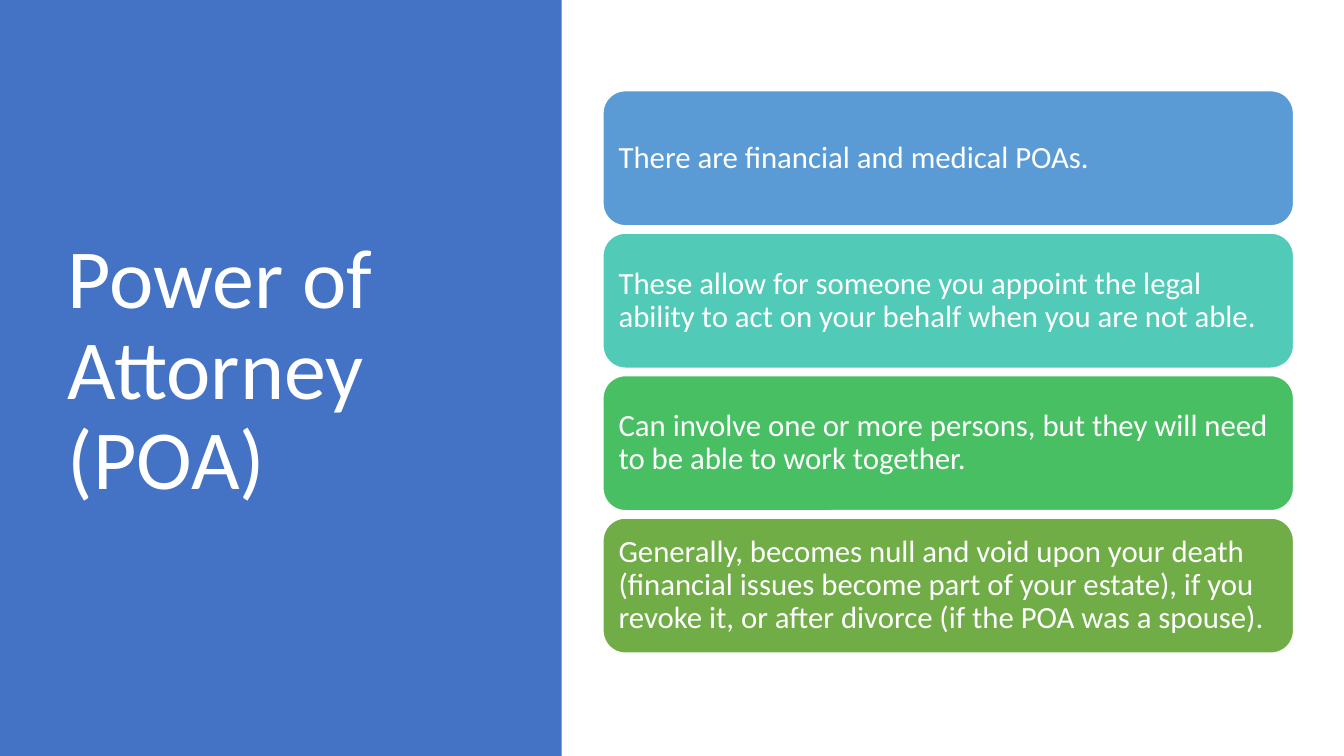
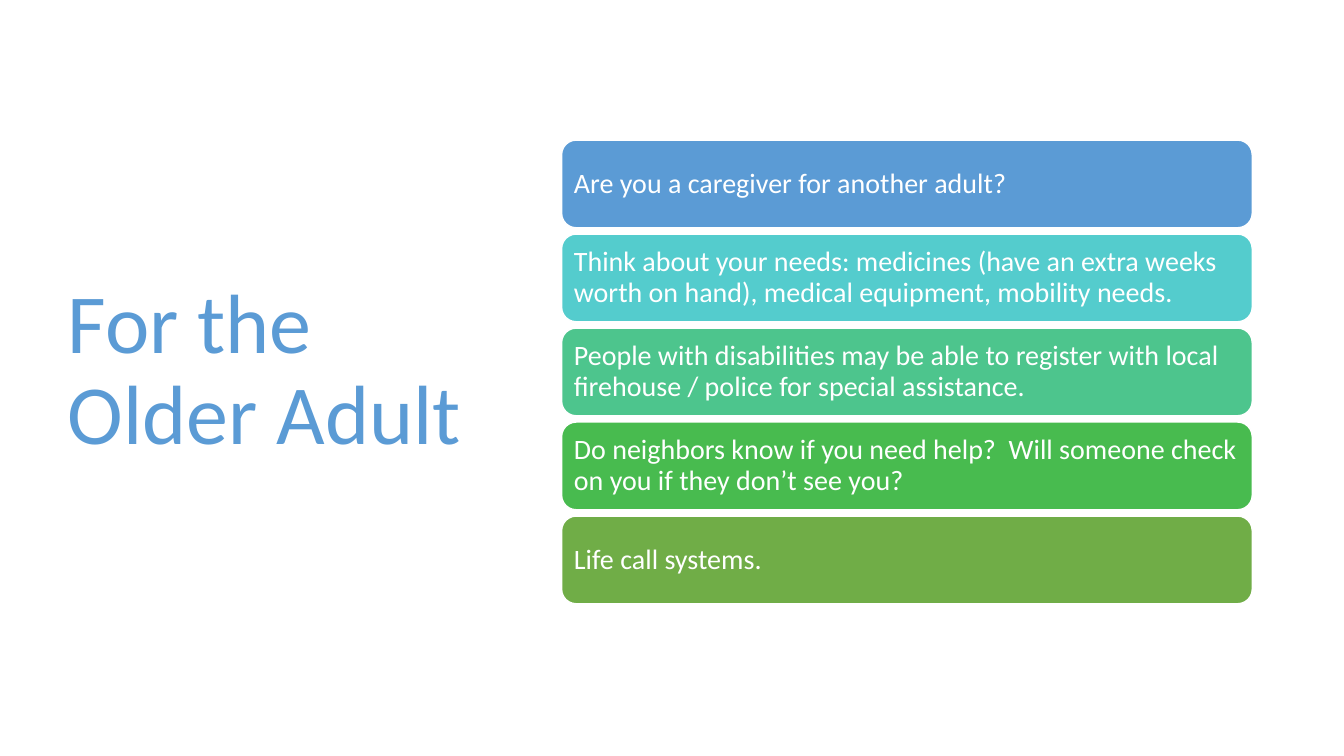
from pptx import Presentation
from pptx.dml.color import RGBColor
from pptx.enum.shapes import MSO_SHAPE
from pptx.enum.text import MSO_ANCHOR, MSO_AUTO_SIZE, PP_ALIGN
from pptx.util import Inches, Pt

RECT = MSO_SHAPE.RECTANGLE
ROUND = MSO_SHAPE.ROUNDED_RECTANGLE
MIDDLE = MSO_ANCHOR.MIDDLE
NO_FIT = MSO_AUTO_SIZE.NONE
LEFT = PP_ALIGN.LEFT

WHITE = RGBColor(0xFF, 0xFF, 0xFF)
NAVY = RGBColor(0x44, 0x72, 0xC4)
BLUE = RGBColor(0x5B, 0x9B, 0xD5)
TEAL = RGBColor(0x52, 0xCA, 0xB8)
CYAN = RGBColor(0x54, 0xCC, 0xCD)
MINT = RGBColor(0x4D, 0xC5, 0x8D)
GREEN = RGBColor(0x49, 0xBF, 0x64)
LEAF = RGBColor(0x48, 0xBB, 0x4F)
OLIVE = RGBColor(0x70, 0xAD, 0x47)

FONT = "Calibri"
TITLE_BOX = (0.57, 0.68, 4.16, 6.02)
PANEL_BOX = (0, 0, 5.57, 7.5)

POA_CARDS = [
    ("There are financial and medical POAs.", BLUE),
    ("These allow for someone you appoint the legal ability to act on your "
     "behalf when you are not able.", TEAL),
    ("Can involve one or more persons, but they will need to be able to "
     "work together.", GREEN),
    ("Generally, becomes null and void upon your death (financial issues "
     "become part of your estate), if you revoke it, or after divorce (if "
     "the POA was a spouse).", OLIVE),
]
ADULT_CARDS = [
    ("Are you a caregiver for another adult?", BLUE),
    ("Think about your needs: medicines (have an extra weeks worth on hand), "
     "medical equipment, mobility needs.", CYAN),
    ("People with disabilities may be able to register with local firehouse "
     "/ police for special assistance.", MINT),
    ("Do neighbors know if you need help?  Will someone check on you if they "
     "don’t see you?", LEAF),
    ("Life call systems.", OLIVE),
]


def write(shape, text, size, color=WHITE, inset=0.1):
    """Fill a shape with left-aligned, vertically centred text."""
    frame = shape.text_frame
    frame.word_wrap = True
    frame.auto_size = NO_FIT
    frame.vertical_anchor = MIDDLE
    frame.margin_left = frame.margin_right = Inches(inset)
    frame.margin_top = frame.margin_bottom = Inches(inset)
    para = frame.paragraphs[0]
    para.alignment = LEFT
    para.line_spacing = 0.9
    run = para.add_run()
    run.text = text
    run.font.name = FONT
    run.font.size = Pt(size)
    run.font.color.rgb = color


def block(slide, kind, box, fill, line=None):
    """Add a flat filled shape, outlined if a line colour is given."""
    shape = slide.shapes.add_shape(kind, *map(Inches, box))
    shape.shadow.inherit = False
    shape.fill.solid()
    shape.fill.fore_color.rgb = fill
    if line is None:
        shape.line.fill.background()
    else:
        shape.line.color.rgb = line
        shape.line.width = Pt(1)
    return shape


def head(slide, text, color):
    """Place and format the slide title."""
    title = slide.shapes.title
    title.left, title.top, title.width, title.height = map(Inches, TITLE_BOX)
    write(title, text, 60, color)


def panel(slide):
    """Put a coloured panel behind the title."""
    back = block(slide, RECT, PANEL_BOX, NAVY)
    slide.shapes.title.element.addprevious(back.element)


def stack(slide, box, cards, tall, size, inset):
    """Spread cards of one height evenly down the box."""
    left, top, width, height = box
    step = (height - tall) / (len(cards) - 1)
    for i, (text, fill) in enumerate(cards):
        place = (left, top + i * step, width, tall)
        card = block(slide, ROUND, place, fill, WHITE)
        write(card, text, size, inset=inset)


def main():
    """Build and save both slides."""
    deck = Presentation()
    deck.slide_width = Inches(13.33)
    deck.slide_height = Inches(7.5)
    layout = deck.slide_layouts[5]

    slide = deck.slides.add_slide(layout)
    panel(slide)
    head(slide, "Power of Attorney (POA)", WHITE)
    stack(slide, (5.98, 0.9, 6.85, 5.58), POA_CARDS, 1.34, 22, 0.09)

    slide = deck.slides.add_slide(layout)
    head(slide, "For the Older Adult", BLUE)
    stack(slide, (5.57, 1.39, 6.85, 4.6), ADULT_CARDS, 0.87, 20, 0.08)

    deck.save("out.pptx")


if __name__ == "__main__":
    main()
